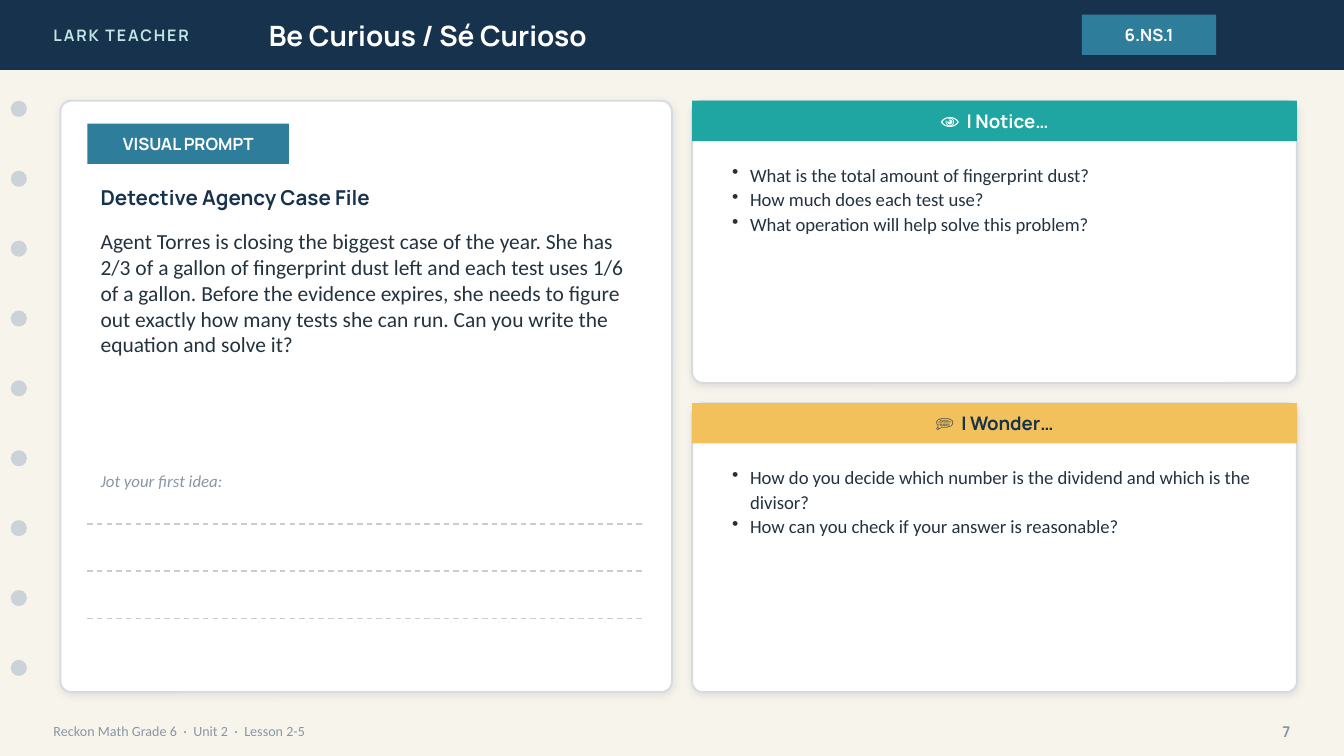
from lxml.etree import SubElement
from pptx import Presentation
from pptx.dml.color import RGBColor
from pptx.enum.dml import MSO_LINE
from pptx.enum.shapes import MSO_CONNECTOR, MSO_SHAPE as Shape
from pptx.enum.text import MSO_ANCHOR as Anchor, MSO_AUTO_SIZE, PP_ALIGN as Align
from pptx.oxml.ns import qn
from pptx.util import Pt

COLORS = {
    "cream": "F7F4EC", "navy": "17324D", "mint": "BFE6E2", "white": "FFFFFF",
    "blue": "2E7D9A", "dot": "CBD3D9", "muted": "8A96A3", "border": "D6DBDF",
    "shadow": "1C2E42", "ink": "24323F", "rule": "C7CDD2",
    "teal": "1FA6A2", "gold": "F2C15B",
}

BRAND = "LARK TEACHER"
TITLE = "Be Curious / Sé Curioso"
STANDARD = "6.NS.1"
FOOTER = "Reckon Math Grade 6  ·  Unit 2  ·  Lesson 2-5"
PAGE = "7"
PROMPT_TAG = "VISUAL PROMPT"
CASE_TITLE = "Detective Agency Case File"
CASE_STORY = (
    "Agent Torres is closing the biggest case of the year. She has 2/3 of a gallon "
    "of fingerprint dust left and each test uses 1/6 of a gallon. Before the evidence "
    "expires, she needs to figure out exactly how many tests she can run. Can you "
    "write the equation and solve it?"
)
JOT_LABEL = "Jot your first idea:"
# heading, band colour, heading colour, top, height, questions
RESPONSE_CARDS = [
    ("👁  I Notice…", "teal", "white", 54, 151.2, [
        "What is the total amount of fingerprint dust?",
        "How much does each test use?",
        "What operation will help solve this problem?",
    ]),
    ("💭  I Wonder…", "gold", "navy", 216, 154.8, [
        "How do you decide which number is the dividend and which is the divisor?",
        "How can you check if your answer is reasonable?",
    ]),
]

SLIDE_W, SLIDE_H = 720, 405
BAR_H = 37.44
DOT_COUNT, DOT_SIZE, DOT_LEFT, DOT_PITCH = 9, 8.64, 5.76, 37.44
CARDS_TOP, CARD_RADIUS = 54, 5.76
PROMPT_LEFT, PROMPT_W, PROMPT_H = 32.4, 327.6, 316.8
INNER_LEFT, INNER_W = 46.8, 298.8
RULE_COUNT, RULE_TOP, RULE_PITCH = 3, 280.8, 25.2
RESPONSE_LEFT, RESPONSE_W = 370.8, 324
TAG_H, RESPONSE_PAD, BULLET_INDENT = 21.6, 14.4, 9.6

HEADING = {"name": "Manrope", "bold": True}
BODY = {"name": "Calibri"}


def rgb(color):
    return RGBColor.from_string(COLORS[color])


def points(*lengths):
    return [Pt(length) for length in lengths]


def add_bullet(paragraph):
    props = paragraph._p.get_or_add_pPr()
    props.set("marL", str(Pt(BULLET_INDENT)))
    props.set("indent", str(-Pt(BULLET_INDENT)))
    SubElement(props, qn("a:buChar"), char="•")


def write(shape, lines, size, color, face, align=Align.LEFT, anchor=Anchor.MIDDLE,
          spacing=None, bulleted=False):
    frame = shape.text_frame
    frame.word_wrap = True
    frame.auto_size = MSO_AUTO_SIZE.NONE
    frame.vertical_anchor = anchor
    frame.text = "\n".join(lines)
    for paragraph in frame.paragraphs:
        paragraph.alignment = align
        if spacing:
            paragraph.line_spacing = spacing
        if bulleted:
            add_bullet(paragraph)
        for run in paragraph.runs:
            for attribute, value in {**face, "size": Pt(size)}.items():
                setattr(run.font, attribute, value)
            run.font.color.rgb = rgb(color)


def add_label(slide, box, text, size, color, face, **layout):
    label = slide.shapes.add_textbox(*points(*box))
    write(label, [text], size, color, face, **layout)
    return label


def add_block(slide, kind, box, fill):
    block = slide.shapes.add_shape(kind, *points(*box))
    block.shadow.inherit = False
    block.fill.solid()
    block.fill.fore_color.rgb = rgb(fill)
    block.line.fill.background()
    return block


def add_tag(slide, box, text, fill, color="white", size=9):
    tag = add_block(slide, Shape.RECTANGLE, box, fill)
    write(tag, [text], size, color, HEADING, align=Align.CENTER)


def add_card(slide, box):
    """Add a white rounded card with a thin border and a soft shadow."""
    card = add_block(slide, Shape.ROUNDED_RECTANGLE, box, "white")
    card.adjustments[0] = CARD_RADIUS / min(box[2:])
    card.line.color.rgb = rgb("border")
    card.line.width = Pt(1)
    effects = card.element.spPr.find(qn("a:effectLst"))
    shadow = SubElement(effects, qn("a:outerShdw"), blurRad=str(Pt(4)), dist=str(Pt(1)),
                        dir="5400000", algn="ctr", rotWithShape="0")
    tint = SubElement(shadow, qn("a:srgbClr"), val=COLORS["shadow"])
    SubElement(tint, qn("a:alpha"), val="10000")


def add_writing_line(slide, y):
    rule = slide.shapes.add_connector(
        MSO_CONNECTOR.STRAIGHT, *points(INNER_LEFT, y, INNER_LEFT + INNER_W, y))
    rule.line.color.rgb = rgb("rule")
    rule.line.width = Pt(0.75)
    rule.line.dash_style = MSO_LINE.DASH
    SubElement(rule.element.spPr, qn("a:effectLst"))


def add_header(slide):
    add_block(slide, Shape.RECTANGLE, (0, 0, SLIDE_W, BAR_H), "navy")
    brand = add_label(slide, (21.6, 0, 172.8, BAR_H), BRAND, 8.5, "mint", HEADING)
    brand.text_frame.paragraphs[0].runs[0].font._element.set("spc", "100")
    title = slide.shapes.title
    title.left, title.top, title.width, title.height = points(136.8, 0, 403.2, BAR_H)
    write(title, [TITLE], 15, "white", HEADING)
    brand.element.addnext(title.element)  # bring the title in front of the bar
    add_tag(slide, (579.6, 7.92, 72, TAG_H), STANDARD, "blue")


def add_frame(slide):
    for i in range(DOT_COUNT):
        dot = (DOT_LEFT, CARDS_TOP + i * DOT_PITCH, DOT_SIZE, DOT_SIZE)
        add_block(slide, Shape.OVAL, dot, "dot")
    add_label(slide, (21.6, 381.6, 504, 20.16), FOOTER, 7.5, "muted", BODY)
    add_label(slide, (662.4, 381.6, 36, 20.16), PAGE, 8, "muted", HEADING,
              align=Align.RIGHT)


def add_prompt(slide):
    add_card(slide, (PROMPT_LEFT, CARDS_TOP, PROMPT_W, PROMPT_H))
    add_tag(slide, (INNER_LEFT, 66.24, 108, TAG_H), PROMPT_TAG, "blue")
    add_label(slide, (INNER_LEFT, 95.04, INNER_W, 21.6), CASE_TITLE, 11, "navy", HEADING)
    add_label(slide, (INNER_LEFT, 118.8, INNER_W, 122.4), CASE_STORY, 11.5, "ink", BODY,
              anchor=Anchor.TOP)
    add_label(slide, (INNER_LEFT, 248.4, 288, 18), JOT_LABEL, 9, "muted",
              {**BODY, "italic": True})
    for i in range(RULE_COUNT):
        add_writing_line(slide, RULE_TOP + i * RULE_PITCH)


def add_response(slide, heading, band, heading_color, top, height, questions):
    add_card(slide, (RESPONSE_LEFT, top, RESPONSE_W, height))
    add_tag(slide, (RESPONSE_LEFT, top, RESPONSE_W, TAG_H), heading, band,
            heading_color, size=10)
    box = (RESPONSE_LEFT + RESPONSE_PAD, top + 28.8,
           RESPONSE_W - 2 * RESPONSE_PAD, height - 36)
    write(slide.shapes.add_textbox(*points(*box)), questions, 10, "ink", BODY,
          anchor=Anchor.TOP, spacing=1.1, bulleted=True)


def main():
    deck = Presentation()
    deck.slide_width, deck.slide_height = points(SLIDE_W, SLIDE_H)
    slide = deck.slides.add_slide(deck.slide_layouts[5])
    slide.background.fill.solid()
    slide.background.fill.fore_color.rgb = rgb("cream")
    add_header(slide)
    add_frame(slide)
    add_prompt(slide)
    for card in RESPONSE_CARDS:
        add_response(slide, *card)
    deck.save("out.pptx")


if __name__ == "__main__":
    main()
